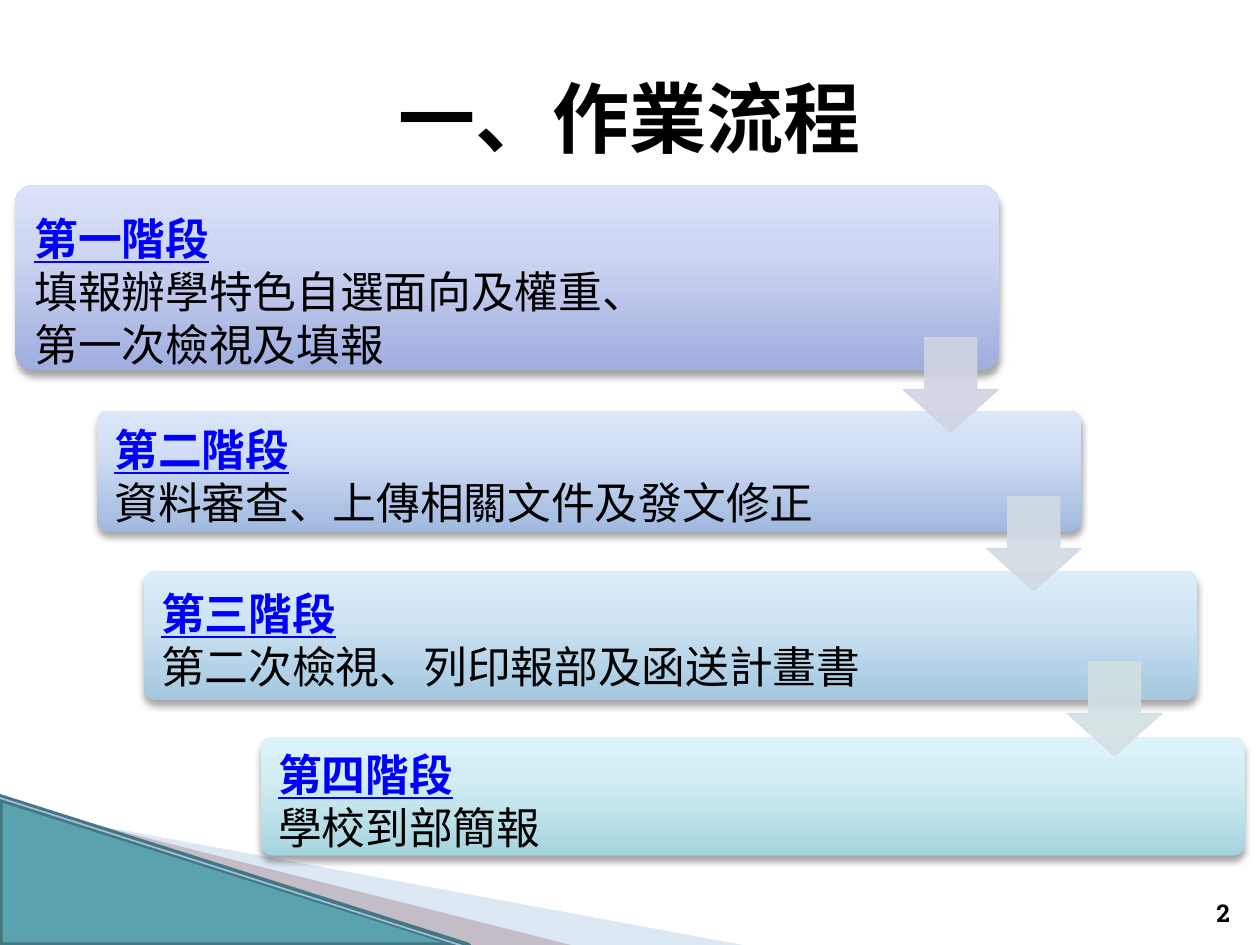
from pptx import Presentation
from pptx.dml.color import RGBColor
from pptx.enum.shapes import MSO_CONNECTOR, MSO_SHAPE as Shape
from pptx.enum.text import MSO_ANCHOR as Anchor, PP_ALIGN as Align
from pptx.oxml import parse_xml
from pptx.oxml.ns import nsdecls, qn
from pptx.util import Inches, Pt

THEME = dict(
    font="Times New Roman", number_font="Roboto Slab",
    text="000000", heading="0000FF", shadow="000000",
    wide_band="ABC6E6", narrow_band="C4BCC6",
    corner="5AA2AE", corner_edge="437881", corner_line="A4C1E3",
    title_size=44, stage_size=25, stage_spacing=30.3, number_size=14,
)

TITLE = "一、作業流程"
PAGE_NUMBER = "2"
STAGES = [
    ("第一階段", ["填報辦學特色自選面向及權重、", "第一次檢視及填報"],
     (0.12, 1.47, 7.81, 1.47), 0.2, ("A0ADDE", "CFD6F3", "DBE1F9")),
    ("第二階段", ["資料審查、上傳相關文件及發文修正"],
     (0.77, 3.26, 7.81, 0.96), 0.06, ("A1B9DF", "D0DDF4", "DCE6F9")),
    ("第三階段", ["第二次檢視、列印報部及函送計畫書"],
     (1.14, 4.53, 8.36, 1.03), 0.06, ("A3C7DF", "D0E5F4", "DCEDF9")),
    ("第四階段", ["學校到部簡報"],
     (2.07, 5.85, 7.81, 0.94), 0.06, ("A5D4DE", "D2EDF3", "DDF3F9")),
]
STOPS = (0, 65, 100)
ARROW_SIZE = 0.75
ARROWS = [(7.17, 2.68, "D0D3E3"), (7.83, 3.94, "D1DAE3"), (8.47, 5.25, "D2E0E3")]
BANDS = [
    ([(0.55, 6.51), (5.95, 7.51), (4.56, 7.51), (0.55, 6.5)], "wide_band", 40),
    ([(0.53, 6.49), (4.57, 7.51), (3.72, 7.52), (0.54, 6.5)], "narrow_band", 100),
]


def color(value):
    return RGBColor.from_string(value)


def inches(values):
    return [Inches(value) for value in values]


def set_alpha(fill_parent, percent):
    tint = fill_parent.find(qn("a:solidFill"))[0]
    tint.append(parse_xml(f'<a:alpha {nsdecls("a")} val="{percent * 1000}"/>'))


def fill_solid(shape, value, alpha=100):
    shape.shadow.inherit = False
    shape.fill.solid()
    shape.fill.fore_color.rgb = color(value)
    if alpha < 100:
        set_alpha(shape._element.spPr, alpha)


def fill_upward(shape, colors):
    shape.fill.gradient()
    stops = "".join(
        f'<a:gs pos="{stop * 1000}"><a:srgbClr val="{value}"/></a:gs>'
        for stop, value in zip(STOPS, colors))
    properties = shape._element.spPr
    properties.replace(properties.find(qn("a:gradFill")), parse_xml(
        f'<a:gradFill {nsdecls("a")} rotWithShape="1"><a:gsLst>{stops}</a:gsLst>'
        '<a:lin ang="16200000" scaled="0"/></a:gradFill>'))


def add_shadow(shape):
    shape.shadow.inherit = False
    shape._element.spPr.find(qn("a:effectLst")).append(parse_xml(
        f'<a:outerShdw {nsdecls("a")} blurRad="{Pt(4)}" dist="{Pt(3)}" dir="5400000" '
        f'rotWithShape="0"><a:srgbClr val="{THEME["shadow"]}"><a:alpha val="35000"/>'
        '</a:srgbClr></a:outerShdw>'))


def style_run(run, size, value, bold=False, underline=False, font=THEME["font"]):
    run.font.name = font
    run.font.size = Pt(size)
    run.font.color.rgb = color(value)
    run.font.bold = bold
    run.font.underline = underline


def add_corner(page):
    for points, name, alpha in BANDS:
        corners = [inches(point) for point in points]
        builder = page.shapes.build_freeform(*corners[0])
        builder.add_line_segments(corners[1:], close=True)
        band = builder.convert_to_shape()
        fill_solid(band, THEME[name], alpha)
        band.line.fill.background()
    corner = page.shapes.add_shape(Shape.RIGHT_TRIANGLE, *inches((-0.01, 6.33, 3.72, 1.18)))
    fill_solid(corner, THEME["corner"])
    corner.line.color.rgb = color(THEME["corner_edge"])
    corner.line.width = Pt(4.33)
    edge = page.shapes.add_connector(
        MSO_CONNECTOR.STRAIGHT, *inches((-0.01, 6.33, 3.71, 7.52)))
    edge.line.color.rgb = color(THEME["corner_line"])
    edge.line.width = Pt(0.95)
    edge._element.spPr.append(parse_xml(f'<a:effectLst {nsdecls("a")}/>'))


def add_title(page):
    title = page.shapes.title
    title.left, title.top, title.width, title.height = inches((0, 0.3, 10, 1.25))
    frame = title.text_frame
    frame.text = TITLE
    frame.vertical_anchor = Anchor.MIDDLE
    para = frame.paragraphs[0]
    para.alignment = Align.CENTER
    style_run(para.runs[0], THEME["title_size"], THEME["text"], bold=True)


def add_number(page):
    box = page.shapes.add_textbox(*inches((9.25, 7.01, 0.61, 0.4)))
    frame = box.text_frame
    frame.word_wrap = True
    frame.vertical_anchor = Anchor.BOTTOM
    frame.text = PAGE_NUMBER
    para = frame.paragraphs[0]
    para.alignment = Align.RIGHT
    style_run(para.runs[0], THEME["number_size"], THEME["text"], bold=True,
              font=THEME["number_font"])


def add_stage(page, heading, lines, place, top_inset, colors):
    box = page.shapes.add_shape(Shape.ROUNDED_RECTANGLE, *inches(place))
    box.adjustments[0] = 0.1
    fill_upward(box, colors)
    box.line.fill.background()
    add_shadow(box)
    frame = box.text_frame
    frame.word_wrap = True
    frame.vertical_anchor = Anchor.MIDDLE
    frame.margin_left, frame.margin_right = inches((0.11, 0.1))
    frame.margin_top, frame.margin_bottom = inches((top_inset, 0))
    para = frame.paragraphs[0]
    para.text = "\v".join([heading, *lines])
    para.alignment = Align.LEFT
    para.line_spacing = Pt(THEME["stage_spacing"])
    title_run, *body_runs = para.runs
    style_run(title_run, THEME["stage_size"], THEME["heading"], bold=True, underline=True)
    for run in body_runs:
        style_run(run, THEME["stage_size"], THEME["text"])


def add_arrow(page, left, top, value):
    arrow = page.shapes.add_shape(
        Shape.DOWN_ARROW, *inches((left, top, ARROW_SIZE, ARROW_SIZE)))
    arrow.adjustments[0] = 0.55
    arrow.adjustments[1] = 0.45
    fill_solid(arrow, value, 90)
    arrow.line.color.rgb = color(value)
    arrow.line.width = Pt(0.75)
    set_alpha(arrow._element.spPr.find(qn("a:ln")), 90)


def main():
    deck = Presentation()
    deck.slide_width, deck.slide_height = inches((10, 7.5))
    page = deck.slides.add_slide(deck.slide_layouts[5])
    add_corner(page)
    add_title(page)
    add_number(page)
    for stage in STAGES:
        add_stage(page, *stage)
    for arrow in ARROWS:
        add_arrow(page, *arrow)
    deck.save("out.pptx")


if __name__ == "__main__":
    main()
